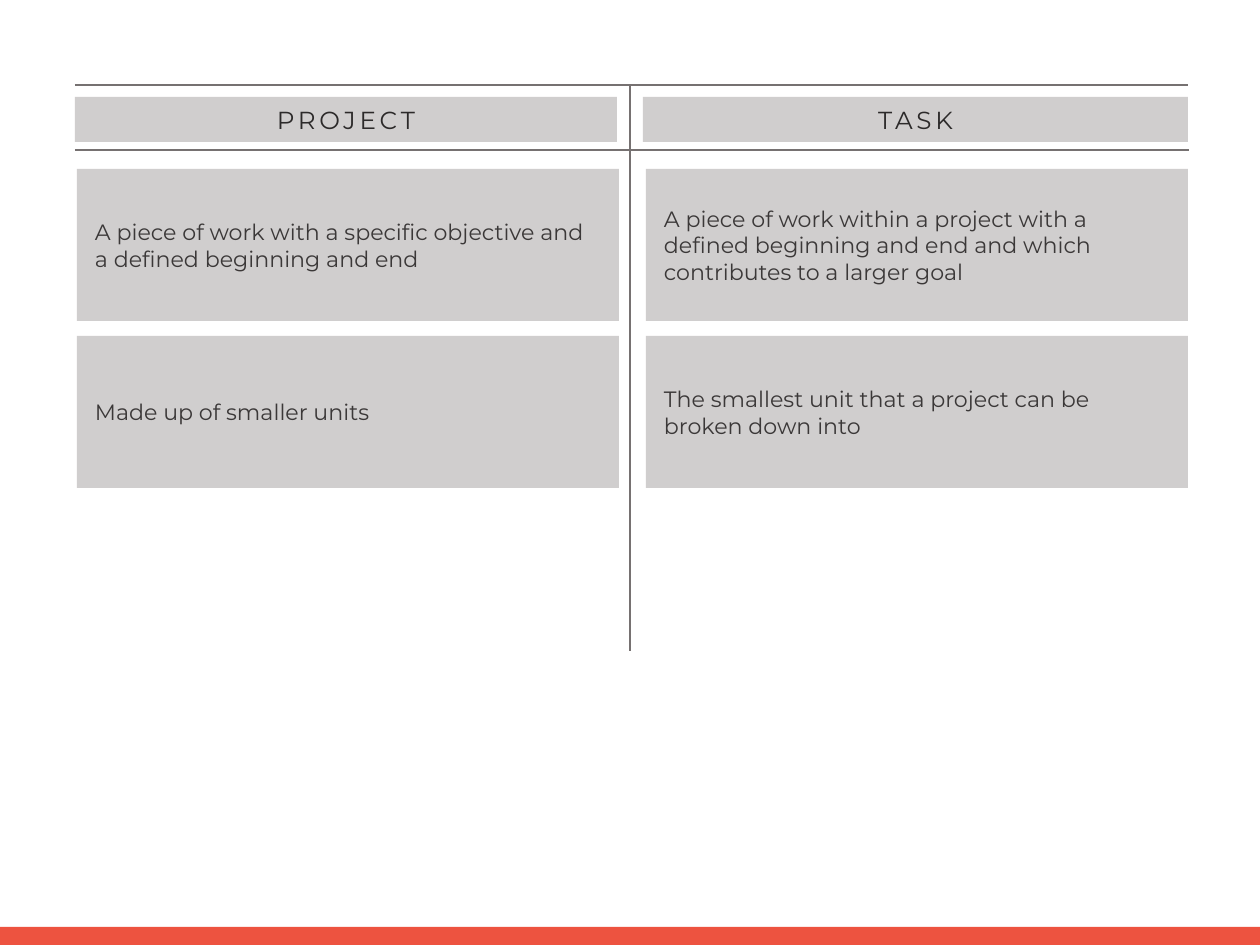
"""Build a slide that compares a project with a task."""
import pptx
import pptx.util
import pptx.dml.color
import pptx.enum.shapes
import pptx.enum.text
import pptx.oxml.ns
import lxml.etree

COLUMNS = [
    ("PROJECT", [
        "A piece of work with a specific objective and a defined beginning and end",
        "Made up of smaller units",
    ]),
    ("TASK", [
        "A piece of work within a project with a defined beginning and end and which contributes to a larger goal",
        "The smallest unit that a project can be broken down into",
    ]),
]

THEME = {
    "font": "Montserrat",
    "bar": "ED5340",
    "rule": "767171",
    "panel": "D0CECE",
    "head": {"size": 20, "color": "2C2A2A"},
    "body": {"size": 18, "color": "3B3838"},
    "spacing": 300,
    "weight": 1,
}

WIDE, HIGH = 1260, 945
SCALE = pptx.util.Inches(1) / 88.6
BAR = (0, 927, WIDE, 18)
HEADS = [(75, 97, 542, 45), (643, 97, 545, 45)]
CARD_X = [77, 646]
CARD_Y, CARD_W, CARD_H, CARD_GAP = 169, 542, 152, 15
RULES = [(75, 85, 1188, 85), (630, 651, 630, 85), (75, 150, 1189, 150)]
INSET_X, INSET_Y = 18, 9

ALIGN = pptx.enum.text.PP_ALIGN
RECT = pptx.enum.shapes.MSO_SHAPE.RECTANGLE
STRAIGHT = pptx.enum.shapes.MSO_CONNECTOR.STRAIGHT


def px(value):
    return round(value * SCALE)


def rgb(code):
    return pptx.dml.color.RGBColor.from_string(code)


def apply(target, values):
    for name, value in values.items():
        setattr(target, name, value)


def add_box(slide, box, fill):
    shape = slide.shapes.add_shape(RECT, *map(px, box))
    shape.shadow.inherit = False
    shape.fill.solid()
    shape.fill.fore_color.rgb = rgb(fill)
    shape.line.fill.background()
    return shape


def add_text(shape, text, style, align, inset=None):
    frame = shape.text_frame
    apply(frame, {
        "word_wrap": True,
        "vertical_anchor": pptx.enum.text.MSO_ANCHOR.MIDDLE,
        **(inset or {}),
    })
    line = frame.paragraphs[0]
    line.alignment = align
    run = line.add_run()
    run.text = text
    apply(run.font, {"name": THEME["font"], "size": pptx.util.Pt(style["size"])})
    run.font.color.rgb = rgb(style["color"])
    return run


def add_rule(slide, ends):
    rule = slide.shapes.add_connector(STRAIGHT, *map(px, ends))
    rule.line.color.rgb = rgb(THEME["rule"])
    rule.line.width = pptx.util.Pt(THEME["weight"])
    lxml.etree.SubElement(rule._element.spPr, pptx.oxml.ns.qn("a:effectLst"))


def main():
    deck = pptx.Presentation()
    apply(deck, {"slide_width": px(WIDE), "slide_height": px(HIGH)})
    slide = deck.slides.add_slide(deck.slide_layouts[6])
    add_box(slide, BAR, THEME["bar"])
    for ends in RULES:
        add_rule(slide, ends)

    inset = {
        "margin_left": px(INSET_X), "margin_right": px(INSET_X),
        "margin_top": px(INSET_Y), "margin_bottom": px(INSET_Y),
    }
    for (title, cards), head, left in zip(COLUMNS, HEADS, CARD_X):
        shape = add_box(slide, head, THEME["panel"])
        run = add_text(shape, title, THEME["head"], ALIGN.CENTER)
        run.font._element.set("spc", str(THEME["spacing"]))
        for row, text in enumerate(cards):
            top = CARD_Y + row * (CARD_H + CARD_GAP)
            shape = add_box(slide, (left, top, CARD_W, CARD_H), THEME["panel"])
            add_text(shape, text, THEME["body"], ALIGN.LEFT, inset)
    deck.save("out.pptx")


if __name__ == "__main__":
    main()
